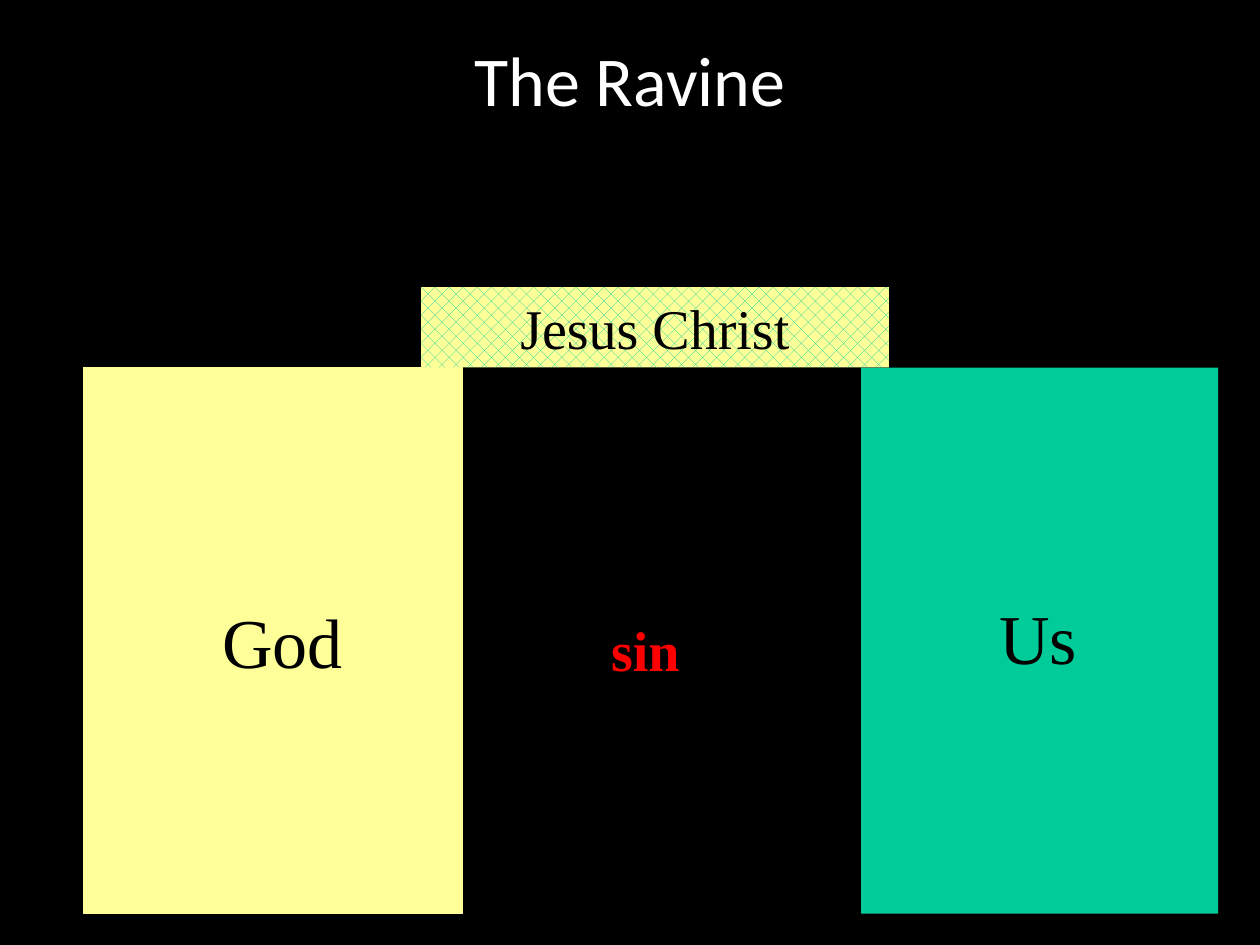
from pptx import Presentation
from pptx.dml.color import RGBColor
from pptx.enum import dml, shapes, text
from pptx.util import Cm, Pt

BLACK = "000000"
WHITE = "FFFFFF"
YELLOW = "FFFF99"
GREEN = "00CC99"
RED = "FF0000"
SERIF = "Times New Roman"


def color(value):
    return RGBColor.from_string(value)


def place(shape, left, top, width, height):
    shape.left, shape.top = Cm(left), Cm(top)
    shape.width, shape.height = Cm(width), Cm(height)


def write(shape, words, size=40, font=SERIF, fill=BLACK, bold=False,
          align=text.PP_ALIGN.LEFT, anchor=text.MSO_ANCHOR.TOP, wrap=False):
    frame = shape.text_frame
    frame.word_wrap = wrap
    frame.vertical_anchor = anchor
    paragraph = frame.paragraphs[0]
    paragraph.alignment = align
    run = paragraph.add_run()
    run.text = words
    run.font.name = font
    run.font.size = Pt(size)
    run.font.bold = bold
    run.font.color.rgb = color(fill)


def fit(shape):
    shape.text_frame.auto_size = text.MSO_AUTO_SIZE.SHAPE_TO_FIT_TEXT


def add_block(slide, box, fill, line=None):
    shape = slide.shapes.add_shape(
        shapes.MSO_SHAPE.RECTANGLE, *(Cm(length) for length in box))
    shape.shadow.inherit = False
    shape.fill.solid()
    shape.fill.fore_color.rgb = color(fill)
    if line:
        shape.line.color.rgb = color(line)
        shape.line.width = Pt(0.75)
    else:
        shape.line.fill.background()
    return shape


def add_label(slide, box, words, **style):
    label = slide.shapes.add_textbox(*(Cm(length) for length in box))
    write(label, words, **style)
    fit(label)


def add_bridge(slide, box, words):
    bridge = add_block(slide, box, YELLOW)
    bridge.fill.patterned()
    bridge.fill.pattern = dml.MSO_PATTERN.PERCENT_25
    bridge.fill.fore_color.rgb = color(GREEN)
    bridge.fill.back_color.rgb = color(YELLOW)
    write(bridge, words, size=32, align=text.PP_ALIGN.CENTER, wrap=True)
    fit(bridge)


def main():
    presentation = Presentation()
    presentation.slide_width, presentation.slide_height = Cm(25.4), Cm(19.05)
    slide = presentation.slides.add_slide(presentation.slide_layouts[5])
    slide.background.fill.solid()
    slide.background.fill.fore_color.rgb = color(BLACK)

    title = slide.shapes.title
    place(title, 0, 0, 25.4, 3.18)
    write(title, "The Ravine", font="Calibri", fill=WHITE, wrap=True,
          align=text.PP_ALIGN.CENTER, anchor=text.MSO_ANCHOR.MIDDLE)

    cliff_top, cliff_height = 7.41, 11.01
    add_block(slide, (1.69, cliff_top, 7.63, cliff_height), YELLOW, line=YELLOW)
    add_label(slide, (4.23, 11.94, 2.95, 1.96), "God")
    add_block(slide, (17.36, cliff_top, 7.2, cliff_height), GREEN)
    us = add_block(slide, (19.9, 11.86, 2.08, 1.96), GREEN)
    write(us, "Us")
    fit(us)

    bridge_height = 1.62
    add_bridge(slide, (8.49, cliff_top - bridge_height, 9.43, bridge_height),
               "Jesus Christ")
    add_label(slide, (12.07, 12.28, 1.95, 1.62), "sin",
              size=32, fill=RED, bold=True)

    presentation.save("out.pptx")


if __name__ == "__main__":
    main()
